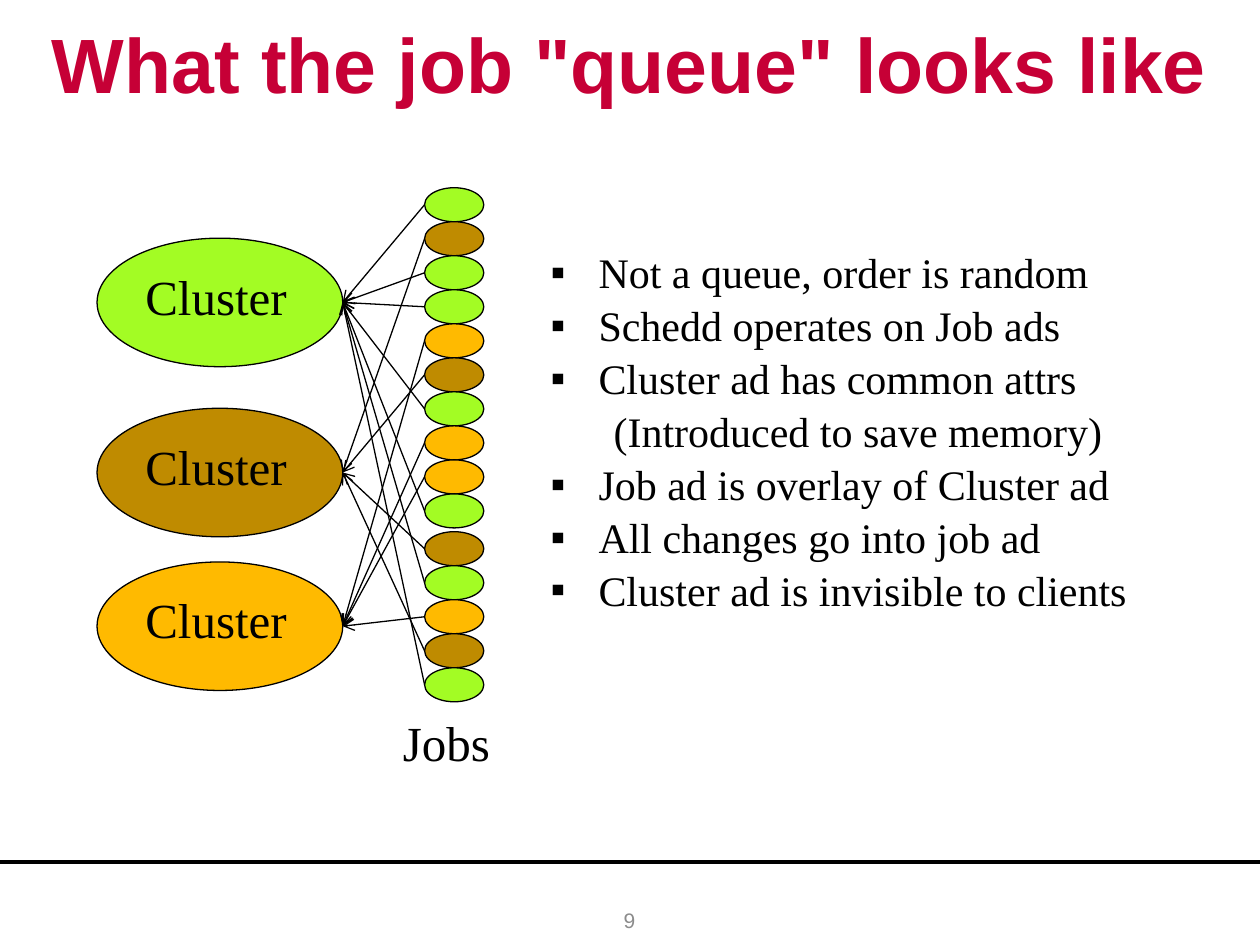
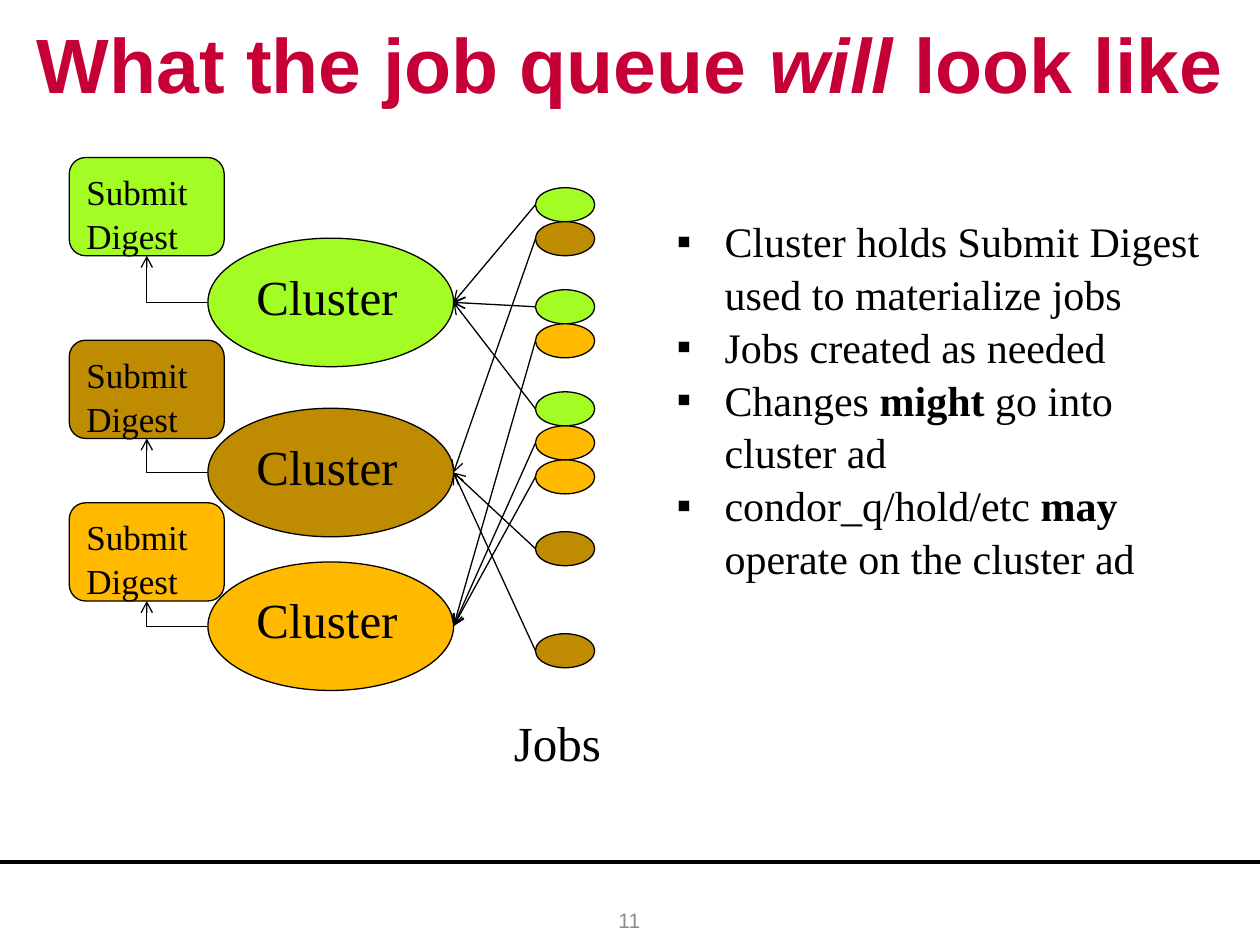
from lxml import etree
from pptx import Presentation
from pptx.dml.color import RGBColor
from pptx.enum import shapes, text
from pptx.oxml.ns import qn
from pptx.util import Inches, Pt

BLACK, CRIMSON, GREY = "000000", "C60036", "8C8C8C"
COLORS = {"G": "A3FC24", "B": "BF8B00", "O": "FFBA00"}
SERIF = {"name": "Times New Roman", "color": BLACK}
HEADING = {"name": "Arial", "size": 44, "color": CRIMSON, "bold": True}
NUMBER = {"name": "Arial", "size": 12, "color": GREY}

CLUSTER_W, CLUSTER_H = 1.95, 1.02
CLUSTER_TOPS = {"G": 1.89, "B": 3.24, "O": 4.46}
DIGEST_TOPS = {"G": 1.25, "B": 2.7, "O": 3.99}
DIGEST_X, DIGEST_W, DIGEST_H = 0.55, 1.23, 0.78
JOB_W, JOB_H, JOB_PITCH, JOB_TOP = 0.47, 0.27, 0.27, 1.49
JOB_SPLIT, SPLIT_GAP = 10, 0.03

# One letter per job row gives its cluster; a dot is an empty row.
# Runs are (text, attribute to switch on); an indented note has no bullet.
SLIDES = [
    {
        "title": [('What the job "queue" looks like', None)],
        "number": "9", "cluster_x": 0.77, "jobs": "GBGGOBGOOGBGOBG",
        "digests": False, "list_at": (4.27, 1.89, 5.03, 2.93),
        "points": [
            (0, [("Not a queue, order is random", None)]),
            (0, [("Schedd operates on Job ads", None)]),
            (0, [("Cluster ad has common attrs", None)]),
            (1, [("(Introduced to save memory)", None)]),
            (0, [("Job ad is overlay of Cluster ad", None)]),
            (0, [("All changes go into job ad", None)]),
            (0, [("Cluster ad is invisible to clients", None)]),
        ],
    },
    {
        "title": [("What the job queue ", None), ("will", "italic"), (" look like", None)],
        "number": "11", "cluster_x": 1.65, "jobs": "GB.GO.GOO.B..B.",
        "digests": True, "list_at": (5.27, 1.64, 4.53, 3.33),
        "points": [
            (0, [("Cluster holds Submit Digest used to materialize jobs", None)]),
            (0, [("Jobs created as needed", None)]),
            (0, [("Changes ", None), ("might ", "bold"), ("go into cluster ad", None)]),
            (0, [("condor_q/hold/etc ", None), ("may", "bold"),
                 (" operate on the cluster ad", None)]),
        ],
    },
]


def write(p, runs, look, align=text.PP_ALIGN.LEFT):
    """Fill a paragraph with runs that share one look."""
    p.alignment = align
    p.space_before = Pt(0)
    if look["name"] == SERIF["name"]:
        p.line_spacing = 1.05
    for words, switch in runs:
        r = p.add_run()
        r.text = words
        for key, value in look.items():
            if key == "color":
                r.font.color.rgb = RGBColor.from_string(value)
            else:
                setattr(r.font, key, Pt(value) if key == "size" else value)
        if switch:
            setattr(r.font, switch, True)


def outline(sp, fill=None, width=0.75, arrow=False):
    """Give a shape or connector a black line, without a shadow."""
    sp.line.color.rgb = RGBColor.from_string(BLACK)
    sp.line.width = Pt(width)
    if fill:
        sp.shadow.inherit = False
        sp.fill.solid()
        sp.fill.fore_color.rgb = RGBColor.from_string(fill)
        sp.text_frame.vertical_anchor = text.MSO_ANCHOR.TOP
    else:
        etree.SubElement(sp._element.spPr, qn("a:effectLst"))
    if arrow:
        etree.SubElement(sp.line._get_or_add_ln(), qn("a:tailEnd"), type="arrow")


prs = Presentation()
prs.slide_width, prs.slide_height = Inches(10), Inches(7.5)
layout = prs.slide_layouts[1]
OVAL, ROUNDED = shapes.MSO_SHAPE.OVAL, shapes.MSO_SHAPE.ROUNDED_RECTANGLE
STRAIGHT, ELBOW = shapes.MSO_CONNECTOR.STRAIGHT, shapes.MSO_CONNECTOR.ELBOW

for content in SLIDES:
    s = prs.slides.add_slide(layout)

    title = s.shapes.title
    title.left, title.top, title.width, title.height = map(Inches, (0, 0, 10, 1))
    title.text_frame.auto_size = text.MSO_AUTO_SIZE.NONE
    title.text_frame.vertical_anchor = text.MSO_ANCHOR.MIDDLE
    write(title.text_frame.paragraphs[0], content["title"], HEADING, text.PP_ALIGN.CENTER)

    number = s.shapes.add_textbox(*map(Inches, (3.83, 7.1, 2.33, 0.4)))
    number.text_frame.word_wrap = True
    number.text_frame.vertical_anchor = text.MSO_ANCHOR.MIDDLE
    write(number.text_frame.paragraphs[0], [(content["number"], None)], NUMBER,
          text.PP_ALIGN.CENTER)

    # Clusters
    cluster_x = content["cluster_x"]
    for key, top in CLUSTER_TOPS.items():
        cluster = s.shapes.add_shape(OVAL, *map(Inches, (cluster_x, top, CLUSTER_W, CLUSTER_H)))
        outline(cluster, COLORS[key])
        write(cluster.text_frame.paragraphs[0], [("Cluster", None)], SERIF | {"size": 28})

    # Jobs, each pointing at its cluster
    job_x = cluster_x + 2.6
    for row, key in enumerate(content["jobs"]):
        if key == ".":
            continue
        top = JOB_TOP + row * JOB_PITCH + (SPLIT_GAP if row >= JOB_SPLIT else 0)
        job = s.shapes.add_shape(OVAL, *map(Inches, (job_x, top, JOB_W, JOB_H)))
        outline(job, COLORS[key])
        link = s.shapes.add_connector(STRAIGHT, *map(Inches, (
            job_x, top + JOB_H / 2,
            cluster_x + CLUSTER_W, CLUSTER_TOPS[key] + CLUSTER_H / 2)))
        outline(link, arrow=True)

    label = s.shapes.add_textbox(*map(Inches, (cluster_x + 2.33, 5.58, 1, 0.57)))
    label.text_frame.word_wrap = True
    write(label.text_frame.paragraphs[0], [("Jobs", None)], SERIF | {"size": 28})

    # Submit digests, each reached from its cluster by an elbow
    if content["digests"]:
        for key, top in DIGEST_TOPS.items():
            digest = s.shapes.add_shape(ROUNDED, *map(Inches, (DIGEST_X, top, DIGEST_W, DIGEST_H)))
            outline(digest, COLORS[key])
            write(digest.text_frame.paragraphs[0], [("Submit Digest", None)], SERIF | {"size": 20})
            elbow = s.shapes.add_connector(ELBOW, *map(Inches, (
                DIGEST_X + DIGEST_W / 2, top + DIGEST_H,
                cluster_x, CLUSTER_TOPS[key] + CLUSTER_H / 2)))
            outline(elbow, arrow=True)
            # A half turn makes the single bend start at the cluster
            elbow._element.spPr.find(qn("a:prstGeom")).set("prst", "bentConnector2")
            elbow._element.spPr.find(qn("a:xfrm")).set("rot", "10800000")

    # Points
    body = s.placeholders[1]
    body.left, body.top, body.width, body.height = map(Inches, content["list_at"])
    tf = body.text_frame
    tf.auto_size = text.MSO_AUTO_SIZE.NONE
    tf.vertical_anchor = text.MSO_ANCHOR.TOP
    for i, (level, runs) in enumerate(content["points"]):
        p = tf.add_paragraph() if i else tf.paragraphs[0]
        p.level = level
        write(p, runs, SERIF | {"size": 24})
        pPr = p._p.get_or_add_pPr()
        pPr.set("marL", str(Inches(0.5 if level else 0.38)))
        pPr.set("indent", str(Inches(0 if level else -0.38)))
        if level:
            etree.SubElement(pPr, qn("a:buNone"))
        else:
            etree.SubElement(pPr, qn("a:buFont"), typeface="Arial")
            etree.SubElement(pPr, qn("a:buChar"), char="▪")

# The footer rule is drawn once and moved to the master
rule = s.shapes.add_connector(STRAIGHT, *map(Inches, (0, 6.84, 10, 6.84)))
outline(rule, width=2.25)
prs.slide_master.shapes._spTree.append(rule._element)

prs.save("out.pptx")
